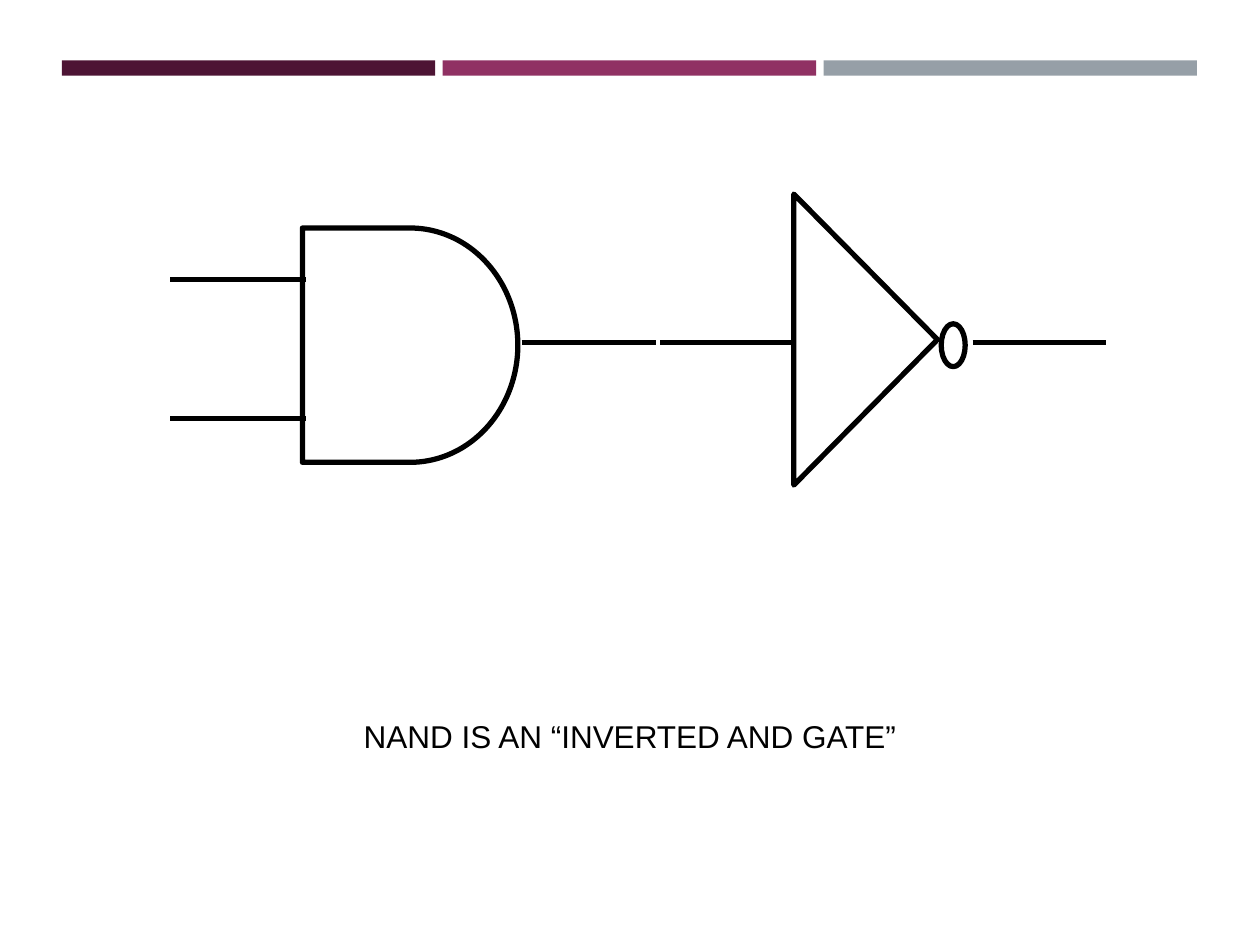
import lxml.etree
import pptx
import pptx.dml.color
import pptx.enum.shapes
import pptx.enum.text
import pptx.oxml.ns
import pptx.util

Inches = pptx.util.Inches
Kind = pptx.enum.shapes.MSO_SHAPE
BLACK = "000000"


def color(code):
    return pptx.dml.color.RGBColor.from_string(code)


def stroke(line):
    line.color.rgb = color(BLACK)
    line.width = pptx.util.Pt(3)


def shape(parent, kind, left, top, width, height, fill=None):
    item = parent.shapes.add_shape(
        kind, Inches(left), Inches(top), Inches(width), Inches(height))
    item.shadow.inherit = False
    if fill:
        item.fill.solid()
        item.fill.fore_color.rgb = color(fill)
        item.line.fill.background()
    else:
        item.fill.background()
        stroke(item.line)
    return item


def wire(parent, left, right, y):
    item = parent.shapes.add_connector(
        pptx.enum.shapes.MSO_CONNECTOR.STRAIGHT,
        Inches(left), Inches(y), Inches(right), Inches(y))
    stroke(item.line)
    lxml.etree.SubElement(item._element.spPr, pptx.oxml.ns.qn("a:effectLst"))


def text(slide, words, left, top, width, height, size=18, font="Arial", fill=BLACK):
    box = slide.shapes.add_textbox(
        Inches(left), Inches(top), Inches(width), Inches(height))
    frame = box.text_frame
    frame.word_wrap = True
    frame.auto_size = pptx.enum.text.MSO_AUTO_SIZE.SHAPE_TO_FIT_TEXT
    line = frame.paragraphs[0]
    line.alignment = pptx.enum.text.PP_ALIGN.CENTER
    run = line.add_run()
    run.text = words
    run.font.size = pptx.util.Pt(size)
    run.font.name = font
    run.font.color.rgb = color(fill)


def header(slide, left, top, width, height, gap=0.06):
    fills = ["4D1434", "903163", "969FA7"]
    part = (width - gap * (len(fills) - 1)) / len(fills)
    for index, fill in enumerate(fills):
        shape(slide, Kind.RECTANGLE, left + index * (part + gap), top, part, height, fill)


def inverter(slide, left, top, width, height):
    group = slide.shapes.add_group_shape()
    depth = 1.14
    front = left + 1.06
    middle = top + height / 2
    body = shape(group, Kind.FLOWCHART_EXTRACT,
                 front + (depth - height) / 2, middle - depth / 2, height, depth)
    body.rotation = 90
    shape(group, Kind.OVAL, left + 2.23, top + 1.03, 0.19, 0.34)
    level = top + 1.18
    wire(group, left + width - 1.06, left + width, level)
    wire(group, left, front, level)


def and_gate(slide, left, top, width, height):
    group = slide.shapes.add_group_shape()
    shape(group, Kind.FLOWCHART_DELAY, left + 1.05, top, 1.71, height)
    for drop in (0.41, 1.51):
        wire(group, left, left + 1.08, top + drop)
    wire(group, left + width - 1.07, left + width, top + 0.91)


def main():
    deck = pptx.Presentation()
    deck.slide_width = Inches(10)
    deck.slide_height = Inches(7.5)
    slide = deck.slides.add_slide(deck.slide_layouts[6])
    header(slide, 0.49, 0.48, 9.01, 0.12)
    inverter(slide, 5.24, 1.54, 3.54, 2.31)
    and_gate(slide, 1.35, 1.81, 3.86, 1.86)
    text(slide, "NAND IS AN “INVERTED AND GATE”", 1.06, 5.64, 7.88, 0.4)
    deck.save("out.pptx")


if __name__ == "__main__":
    main()
